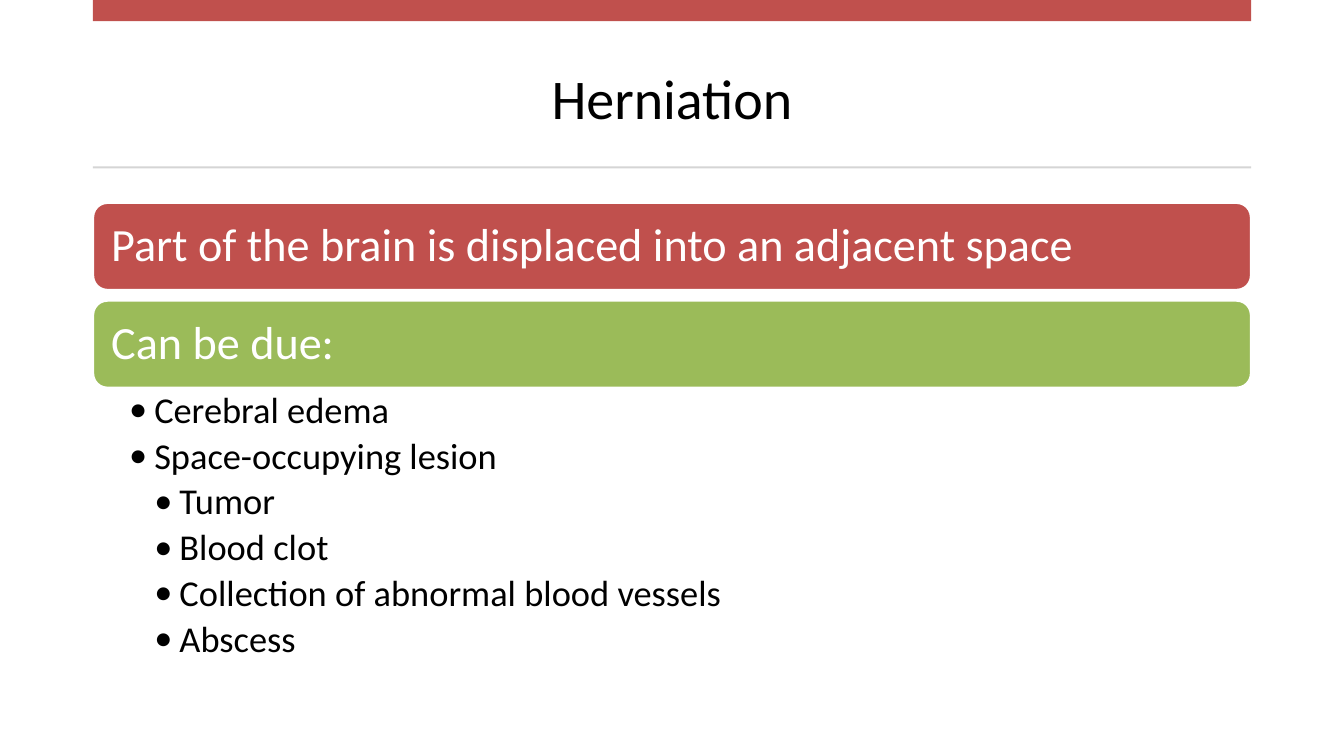
from lxml import etree
from pptx import Presentation
from pptx import util as u
from pptx.dml.color import RGBColor
from pptx.enum import shapes, text
from pptx.oxml import ns

COLORS = {"red": "C0504D", "green": "9BBB59", "rule": "D5D5D5",
          "white": "FFFFFF", "black": "000000"}
LEFT, WIDTH = 0.92, 11.49
STATEMENTS = [("Part of the brain is displaced into an adjacent space", "red"),
              ("Can be due:", "green")]
CAUSES = [("Cerebral edema", 1), ("Space-occupying lesion", 1), ("Tumor", 2),
          ("Blood clot", 2), ("Collection of abnormal blood vessels", 2),
          ("Abscess", 2)]


def rgb(name):
    """Return the palette colour with this name."""
    return RGBColor.from_string(COLORS[name])


def apply_format(target, values):
    """Set each attribute named in the format values."""
    for key, value in values.items():
        setattr(target, key, value)


def write(paragraph, wording, size, color):
    """Put one formatted run into a paragraph."""
    run = paragraph.add_run()
    run.text = wording
    apply_format(run.font, {"name": "Calibri", "size": u.Pt(size)})
    run.font.color.rgb = rgb(color)


def add_block(slide, kind, box, color):
    """Draw a filled shape without outline or shadow."""
    block = slide.shapes.add_shape(kind, *map(u.Inches, box))
    block.shadow.inherit = False
    block.fill.solid()
    block.fill.fore_color.rgb = rgb(color)
    block.line.fill.background()
    return block


def add_header(slide, left, top, width):
    """Place the top band, the title and the rule beneath it."""
    rectangle = shapes.MSO_SHAPE.RECTANGLE
    add_block(slide, rectangle, (left, top, width, 0.21), "red")
    add_block(slide, rectangle, (left, top + 1.65, width, 0.02), "rule")
    title = slide.shapes.title
    apply_format(title, {"left": u.Inches(left), "top": u.Inches(top + 0.37),
                         "width": u.Inches(width), "height": u.Inches(1.18)})
    title.text_frame.vertical_anchor = text.MSO_ANCHOR.MIDDLE
    heading = title.text_frame.paragraphs[0]
    heading.alignment = text.PP_ALIGN.CENTER
    write(heading, "Herniation", 40, "black")


def add_statement(slide, box, wording, color):
    """Draw a rounded bar holding one statement."""
    bar = add_block(slide, shapes.MSO_SHAPE.ROUNDED_RECTANGLE, box, color)
    bar.line.color.rgb = rgb("white")
    bar.line.width = u.Pt(2)
    apply_format(bar.text_frame, {
        "word_wrap": True, "vertical_anchor": text.MSO_ANCHOR.MIDDLE,
        "margin_left": u.Inches(0.14), "margin_right": u.Inches(0.14)})
    statement = bar.text_frame.paragraphs[0]
    apply_format(statement, {"alignment": text.PP_ALIGN.LEFT, "line_spacing": 0.9})
    write(statement, wording, 33, "white")


def add_causes(slide, box):
    """List the causes as bullets on two levels."""
    frame = slide.shapes.add_textbox(*map(u.Inches, box)).text_frame
    apply_format(frame, {"word_wrap": True, "margin_left": u.Inches(0.36),
                         "margin_right": u.Inches(0.26)})
    for index, (wording, level) in enumerate(CAUSES):
        cause = frame.add_paragraph() if index else frame.paragraphs[0]
        apply_format(cause, {"level": level, "line_spacing": 0.9,
                             "space_after": u.Pt(4.6)})
        properties = cause._p.get_or_add_pPr()
        properties.set("marL", str(u.Inches(0.25 * level)))
        properties.set("indent", str(u.Inches(-0.25)))
        etree.SubElement(properties, ns.qn("a:buFont")).set("typeface", "Calibri")
        etree.SubElement(properties, ns.qn("a:buChar")).set("char", "•")
        write(cause, wording, 26, "black")


def main():
    """Build the slide and save it."""
    deck = Presentation()
    apply_format(deck, {"slide_width": u.Inches(13.33), "slide_height": u.Inches(7.5)})
    slide = deck.slides.add_slide(deck.slide_layouts[5])
    add_header(slide, LEFT, 0, WIDTH)
    for index, (wording, color) in enumerate(STATEMENTS):
        add_statement(slide, (LEFT, 2.01 + 0.97 * index, WIDTH, 0.87), wording, color)
    add_causes(slide, (LEFT, 3.84, WIDTH, 2.91))
    deck.save("out.pptx")


if __name__ == "__main__":
    main()
